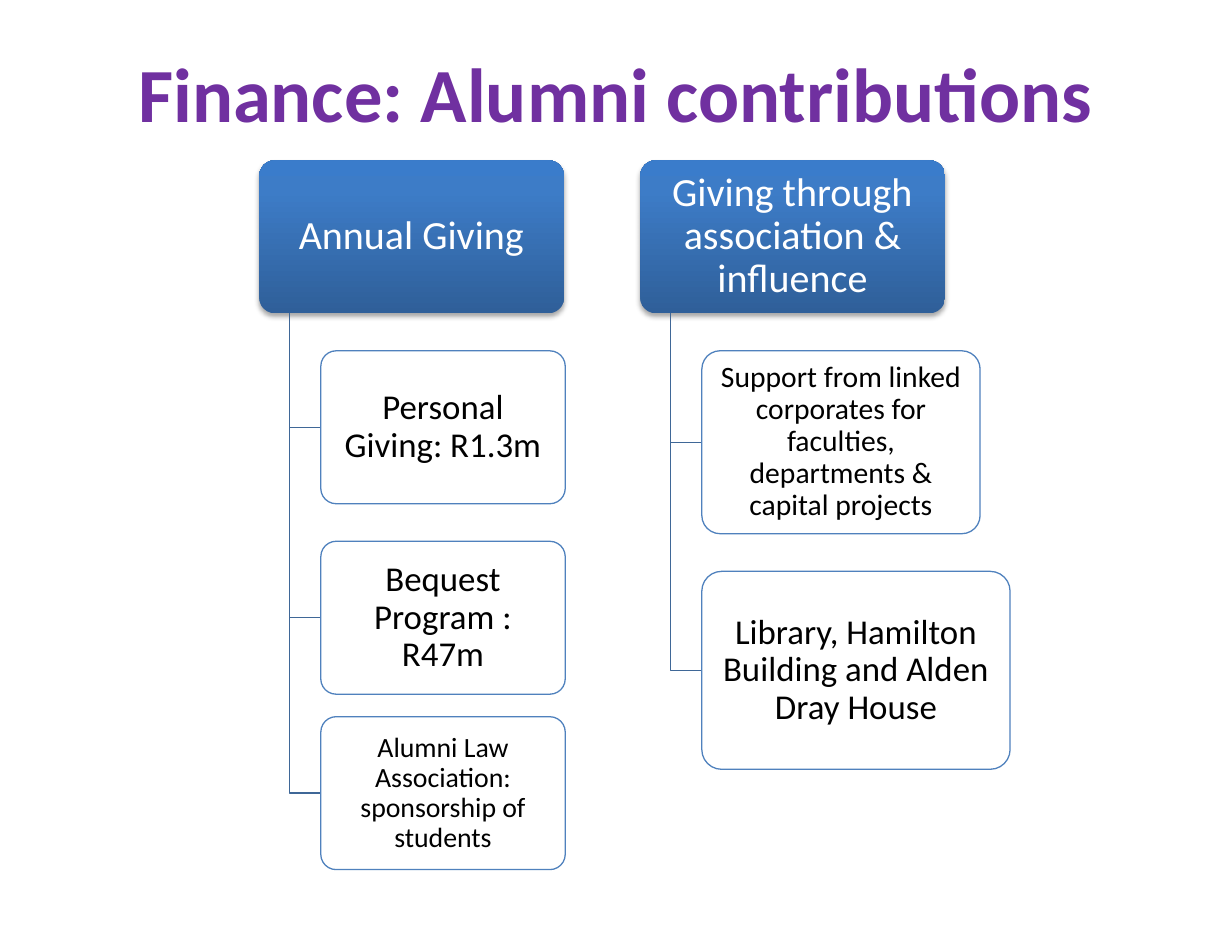
from copy import deepcopy

from lxml import etree
from pptx import Presentation
from pptx.dml.color import RGBColor
from pptx.enum.shapes import MSO_SHAPE
from pptx.enum.text import MSO_ANCHOR, PP_ALIGN
from pptx.oxml.ns import qn
from pptx.util import Inches, Pt

ROUNDED = MSO_SHAPE.ROUNDED_RECTANGLE
MIDDLE = MSO_ANCHOR.MIDDLE
CENTER = PP_ALIGN.CENTER

FONT = "Calibri"
HEADER_STOPS = [(0, "2F5F99"), (0.8, "3D7CC7"), (1, "3A7CCB")]
HEADER_WIDTH, HEADER_HEIGHT = 2.43, 1.22
TOP = 1.28
TRUNK_INDENT, CARD_INDENT = 0.24, 0.49

COLUMNS = [
    (2.07, "Annual Giving", [
        ("Personal Giving: R1.3m", 20, 0.3, 1.95, 1.22),
        ("Bequest Program : R47m", 20, 0.3, 1.95, 1.22),
        ("Alumni Law Association: sponsorship of students", 16, 0.18, 1.95, 1.22),
    ]),
    (5.11, "Giving through association & influence", [
        ("Support from linked corporates for faculties, departments & capital projects",
         17, 0.3, 2.22, 1.46),
        ("Library, Hamilton Building and Alden Dray House", 20, 0.3, 2.46, 1.58),
    ]),
]


def color(value):
    """Turn a hex string into a colour."""
    return RGBColor.from_string(value)


def write_text(shape, text, size, text_color, margins, bold=False, spacing=0.9):
    """Put one centred paragraph into a shape."""
    frame = shape.text_frame
    frame.word_wrap = True
    frame.vertical_anchor = MIDDLE
    frame.margin_left = frame.margin_right = Inches(margins[0])
    frame.margin_top = frame.margin_bottom = Inches(margins[1])
    paragraph = frame.paragraphs[0]
    paragraph.text = text
    paragraph.alignment = CENTER
    paragraph.line_spacing = spacing
    paragraph.font.name = FONT
    paragraph.font.size = Pt(size)
    paragraph.font.bold = bold
    paragraph.font.color.rgb = color(text_color)


def add_alpha(color_element, percent):
    """Give a colour element an opacity."""
    etree.SubElement(color_element, qn("a:alpha"), val=str(percent * 1000))


def add_rounded_box(slide, left, top, width, height):
    """Add a rounded rectangle without shadow."""
    shape = slide.shapes.add_shape(
        ROUNDED, Inches(left), Inches(top), Inches(width), Inches(height))
    shape.adjustments[0] = 0.1
    shape.shadow.inherit = False
    return shape


def add_header(slide, left, top, text):
    """Add the shaded heading of a column."""
    shape = add_rounded_box(slide, left, top, HEADER_WIDTH, HEADER_HEIGHT)
    shape.line.fill.background()
    shape.fill.gradient()
    properties = shape._element.spPr
    stop_list = properties.find(qn("a:gradFill")).find(qn("a:gsLst"))
    stop_list.append(deepcopy(stop_list[-1]))
    for stop, (position, value) in zip(shape.fill.gradient_stops, HEADER_STOPS):
        stop.color.rgb = color(value)
        stop.position = position
    shape.fill.gradient_angle = 90
    shadow = etree.SubElement(
        properties.find(qn("a:effectLst")), qn("a:outerShdw"),
        blurRad=str(Pt(3.1)), dist=str(Pt(1.8)), dir="5400000", rotWithShape="0")
    add_alpha(etree.SubElement(shadow, qn("a:srgbClr"), val="000000"), 35)
    write_text(shape, text, 23, "FFFFFF", (0.05, 0.03))


def add_card(slide, left, top, width, height, text, size):
    """Add an outlined card below a heading."""
    shape = add_rounded_box(slide, left, top, width, height)
    shape.fill.solid()
    shape.fill.fore_color.rgb = color("FFFFFF")
    add_alpha(shape._element.spPr.find(qn("a:solidFill"))[0], 90)
    shape.line.color.rgb = color("4F81BD")
    shape.line.width = Pt(0.75)
    write_text(shape, text, size, "000000", (0.04, 0.03))


def add_branch(slide, trunk, top, card_left, card_middle):
    """Draw the elbow from a heading to a card."""
    builder = slide.shapes.build_freeform(Inches(trunk), Inches(top))
    builder.add_line_segments(
        [(Inches(trunk), Inches(card_middle)), (Inches(card_left), Inches(card_middle))],
        close=False)
    shape = builder.convert_to_shape()
    shape.shadow.inherit = False
    shape.fill.background()
    shape.line.color.rgb = color("3F6797")
    shape.line.width = Pt(0.75)


def add_column(slide, left, top, heading, cards):
    """Add a heading with its cards hanging below."""
    add_header(slide, left, top, heading)
    header_bottom = bottom = top + HEADER_HEIGHT
    card_left = left + CARD_INDENT
    for text, size, gap, width, height in cards:
        card_top = bottom + gap
        add_branch(slide, left + TRUNK_INDENT, header_bottom, card_left,
                   card_top + height / 2)
        add_card(slide, card_left, card_top, width, height, text, size)
        bottom = card_top + height


def add_title(slide, left, top, width, height):
    """Add the slide title."""
    shape = slide.shapes.add_textbox(
        Inches(left), Inches(top), Inches(width), Inches(height))
    write_text(shape, "Finance: Alumni contributions", 44, "7030A0", (0.1, 0.05),
               bold=True, spacing=1.0)


def main():
    """Build and save the presentation."""
    presentation = Presentation()
    presentation.slide_width = Inches(9.83)
    presentation.slide_height = Inches(7.47)
    slide = presentation.slides.add_slide(presentation.slide_layouts[6])
    add_title(slide, 0.49, 0.3, 8.85, 0.86)
    for left, heading, cards in COLUMNS:
        add_column(slide, left, TOP, heading, cards)
    presentation.save("out.pptx")


if __name__ == "__main__":
    main()
